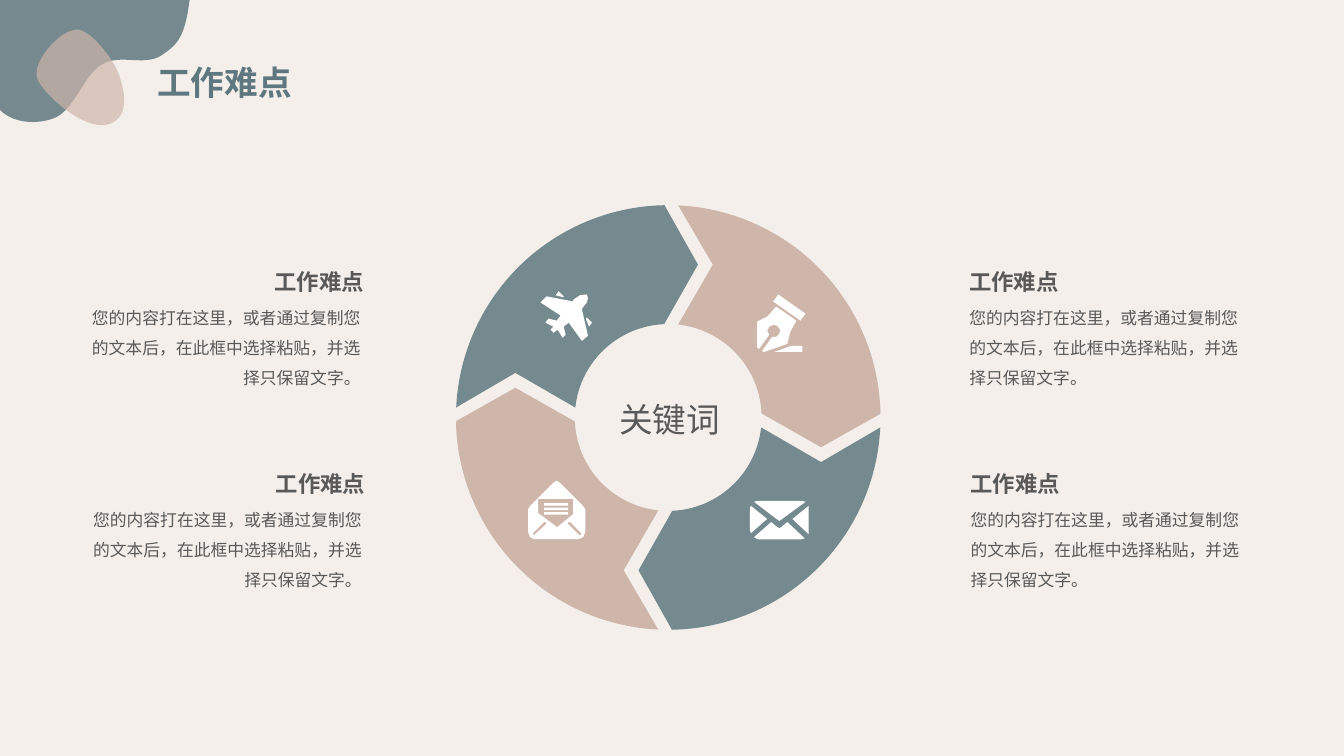
from dataclasses import dataclass
from math import cos, radians, sin

from lxml import etree
from pptx import Presentation
from pptx import util as u
from pptx.dml.color import RGBColor
from pptx.enum import text as t
from pptx.oxml.ns import qn


@dataclass(frozen=True)
class Theme:
    back: str = "F4EFEB"
    teal: str = "758A8F"
    deep: str = "5F787F"
    rose: str = "CEB6AA"
    ink: str = "595959"
    white: str = "FFFFFF"
    font: str = "Noto Sans CJK SC"
    big: int = 24
    head: int = 16
    body: int = 12


THEME = Theme()
TITLE = "工作难点"
BODY = "您的内容打在这里，或者通过复制您的文本后，在此框中选择粘贴，并选择只保留文字。"

# Icon outlines on a grid whose origin is the top left corner of the icon
PLANE = [
    [(46, 3), (47, 7), (46, 11), (42, 16), (41, 18), (47, 44), (41, 49), (28, 31),
     (23, 35), (25, 43), (22, 46), (17, 38), (13, 41), (10, 38), (13, 35), (5, 31),
     (8, 27), (16, 29), (20, 24), (0, 11), (6, 5), (32, 10), (33, 8), (39, 4)],
    [(51, 31), (46, 26), (45, 27), (48, 35)],
    [(18, 0), (15, 4), (23, 6), (23, 5)],
]
PEN = [
    [(2, 54), (0, 52), (0, 27), (10, 22), (19, 12), (39, 26), (33, 37), (30, 49),
     (7, 57), (5, 56), (15, 42), (19, 42), (22, 39), (23, 35), (20, 31), (16, 30),
     (12, 32), (10, 36), (12, 40)],
    [(17, 57), (45, 57), (45, 51), (34, 51)],
    [(43, 26), (48, 19), (21, 0), (16, 7)],
]
MAIL = [
    [(8, 0), (51, 0), (55, 1), (29, 20), (4, 1)],
    [(58, 5), (42, 18), (58, 33)],
    [(54, 37), (51, 38), (8, 38), (4, 36), (21, 21), (27, 26), (29, 27), (31, 26), (37, 21)],
    [(1, 32), (17, 18), (1, 5), (0, 7), (0, 29)],
]
LETTER = [
    [(54, 24), (57, 28), (57, 51), (55, 56), (50, 58), (6, 58), (2, 56), (0, 51),
     (0, 28), (2, 25), (25, 2), (28, 0), (29, 0), (32, 2)],
    [(10, 18), (10, 32), (29, 46), (45, 33), (45, 18)],
    *[[(16, y), (16, y + 2.5), (40, y + 2.5), (40, y)] for y in (22, 26.5, 31)],
    [(6, 54), (18, 43), (18, 41), (16, 41), (5, 52), (5, 54)],
    [(53, 52), (42, 41), (40, 41), (40, 43), (51, 54), (53, 54)],
]


def rgb(code):
    return RGBColor.from_string(code)


def draw(slide, loops, x, y, color, unit=1.0, alpha=100):
    """Fill closed loops of points, one unit being that many centimetres."""
    loops = [[(u.Cm(a * unit), u.Cm(b * unit)) for a, b in loop] for loop in loops]
    pen = slide.shapes.build_freeform(*loops[0][0])
    for i, loop in enumerate(loops):
        if i:
            pen.move_to(*loop[0])
        pen.add_line_segments(loop[1:], close=True)
    shape = pen.convert_to_shape(u.Cm(x), u.Cm(y))
    shape.shadow.inherit = False
    shape.line.fill.background()
    shape.fill.solid()
    shape.fill.fore_color.rgb = rgb(color)
    if alpha < 100:
        tint = shape._element.spPr.find(f"{qn('a:solidFill')}/{qn('a:srgbClr')}")
        etree.SubElement(tint, qn("a:alpha"), val=str(alpha * 1000))


def bend(start, *curves, steps=16):
    """Points along cubic curves, each given by two handles and an end."""
    out = [start]
    for b, c, d in curves:
        a = out[-1]
        for k in range(1, steps + 1):
            s = k / steps
            r = 1 - s
            out.append(tuple(r**3 * a[i] + 3 * r * r * s * b[i]
                             + 3 * r * s * s * c[i] + s**3 * d[i] for i in (0, 1)))
    return out


def arc(radius, first, last, steps=48):
    turns = [radians(first + (last - first) * k / steps) for k in range(steps + 1)]
    return [(radius * cos(a), radius * sin(a)) for a in turns]


def style(frame, words, size, color, bold=False, align=t.PP_ALIGN.LEFT):
    frame.text = words
    frame.vertical_anchor = t.MSO_ANCHOR.TOP
    para = frame.paragraphs[0]
    para.alignment = align
    font = para.font
    font.size, font.bold, font.name = u.Pt(size), bold, THEME.font
    font.color.rgb = rgb(color)
    etree.SubElement(font._rPr, qn("a:ea"), typeface=THEME.font)
    return para


def label(slide, box, words, size, **look):
    frame = slide.shapes.add_textbox(*map(u.Cm, box)).text_frame
    frame.word_wrap = True
    frame.margin_left = frame.margin_right = frame.margin_top = frame.margin_bottom = 0
    return style(frame, words, size, THEME.ink, **look)


def header(slide, x, y, w, h):
    title = slide.shapes.title
    title.left, title.top, title.width, title.height = map(u.Cm, (x, y, w, h))
    frame = title.text_frame
    style(frame, TITLE, THEME.big, THEME.deep, bold=True)
    frame.auto_size = t.MSO_AUTO_SIZE.NONE
    frame.word_wrap = False


def corner(slide, x, y, size):
    """Two overlapping blobs; size is the width of the larger one."""
    unit = size / 1.88
    large = bend((1.88, 0), ((1.83, 0.4), (1.74, 0.45), (1.6, 0.55)),
                 ((1.43, 0.66), (1.19, 0.53), (1.01, 0.64)),
                 ((0.83, 0.74), (0.74, 1.09), (0.54, 1.17)),
                 ((0.36, 1.24), (0.13, 1.22), (0, 1.09)))
    small = bend((0.73, 0.3), ((0.85, 0.24), (1.11, 0.56), (1.17, 0.72)),
                 ((1.23, 0.87), (1.3, 1.16), (1.08, 1.23)),
                 ((0.85, 1.31), (0.43, 0.94), (0.37, 0.78)),
                 ((0.31, 0.62), (0.58, 0.32), (0.73, 0.3)))
    draw(slide, [large + [(0, 0)]], x, y, THEME.deep, unit, 85)
    draw(slide, [small], x, y, THEME.rose, unit, 70)


def ring(slide, x, y, size):
    """Four arrows clockwise from the top left, with icons and a keyword."""
    half = size / 2
    mid = x + half, y + half
    part = [(0.14, -0.72), *arc(1, 269, 182.7), (-0.72, -0.21),
            *arc(0.44, 186.1, 267.5)]
    icons = [(PLANE, 13.62, 7.34, 1.3), (PEN, 19.08, 7.42, 1.22),
             (MAIL, 18.9, 12.62, 1.48), (LETTER, 13.31, 12.12, 1.44)]
    for i, (icon, left, top, wide) in enumerate(icons):
        draw(slide, [part], *mid, (THEME.teal, THEME.rose)[i % 2], half)
        part = [(-b, a) for a, b in part]
        unit = wide / max(a for loop in icon for a, _ in loop)
        draw(slide, icon, x + left - 11.49, y + top - 5.17, THEME.white, unit)
    label(slide, (mid[0] - 1.35, mid[1] - 0.46, 2.77, 1.02), "关键词", THEME.big,
          align=t.PP_ALIGN.CENTER)


def note(slide, x, y, w, right):
    """A heading over a paragraph, both set to one side."""
    side = t.PP_ALIGN.RIGHT if right else t.PP_ALIGN.LEFT
    head = 2.77
    shift = w - head + 0.08 if right else 0
    label(slide, (x + shift, y, head, 0.69), TITLE, THEME.head, bold=True, align=side)
    para = label(slide, (x, y + 0.74, w, 2.31), BODY, THEME.body, align=side)
    para.line_spacing = 1.5


def main():
    deck = Presentation()
    deck.slide_width, deck.slide_height = u.Cm(33.87), u.Cm(19.05)
    slide = deck.slides.add_slide(deck.slide_layouts[5])
    slide.background.fill.solid()
    slide.background.fill.fore_color.rgb = rgb(THEME.back)
    corner(slide, 0, 0, 4.78)
    header(slide, 3.71, 1.42, 3.94, 1.27)
    ring(slide, 11.49, 5.17, 10.7)
    for row in range(2):
        for x, right in ((2.31, True), (24.43, False)):
            note(slide, x + 0.03 * row, 6.76 + 5.08 * row, 6.78, right)
    deck.save("out.pptx")


if __name__ == "__main__":
    main()
